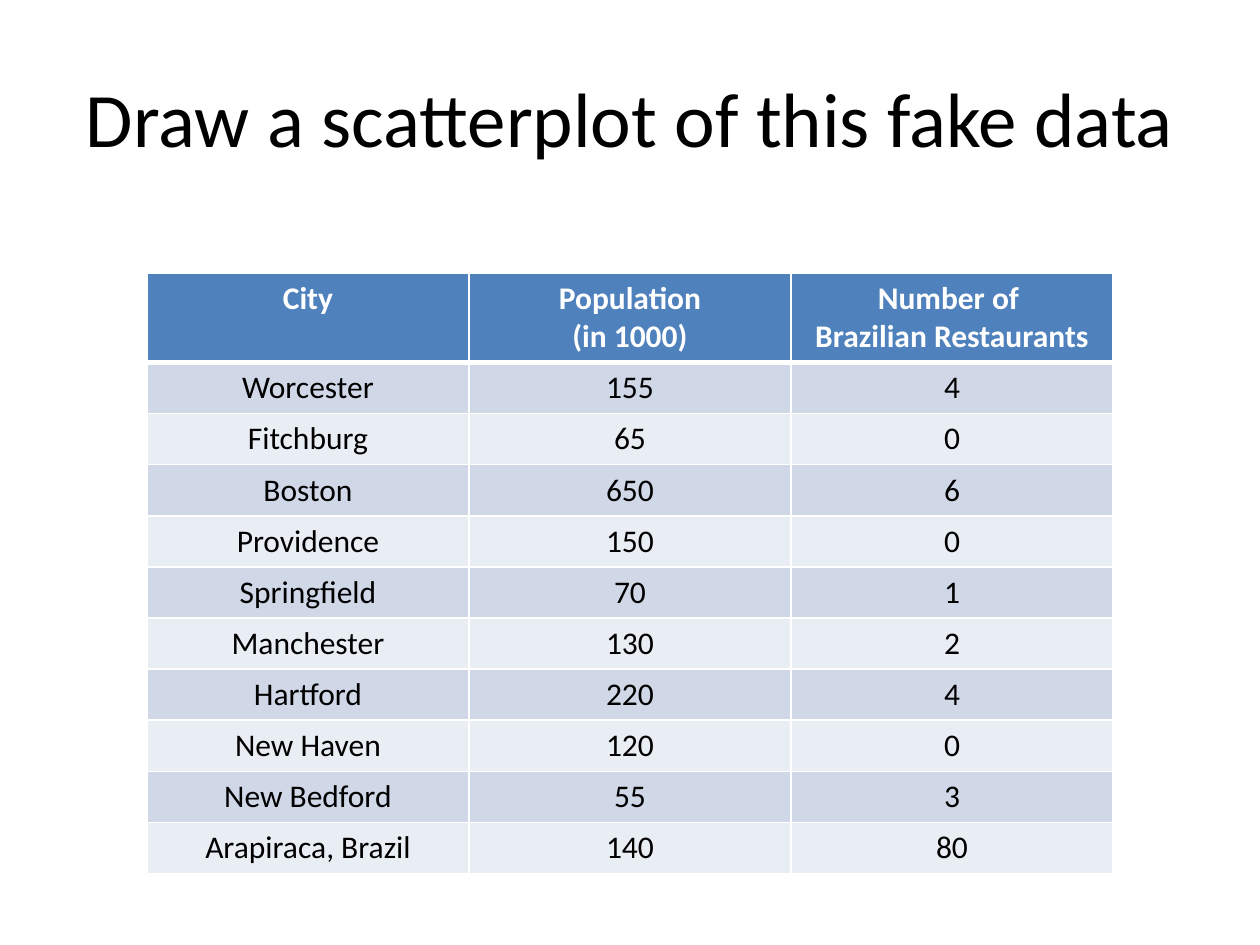
from dataclasses import dataclass
from typing import Any, NamedTuple

from pptx import Presentation, util as u
from pptx.dml.color import RGBColor
from pptx.enum import text
from pptx.oxml import parse_xml
from pptx.oxml.ns import nsdecls

PX = u.Inches(1) / 126


@dataclass(frozen=True)
class Theme:
    font: str = "Calibri"
    title_pt: int = 44
    cell_pt: int = 18
    ink: str = "000000"
    paper: str = "FFFFFF"
    header: str = "4F81BD"
    bands: tuple[str, str] = ("D0D8E8", "E9EDF4")
    rule_pt: int = 1
    header_rule_pt: int = 3


class Box(NamedTuple):
    left: int
    top: int
    width: int
    height: int


class City(NamedTuple):
    name: str
    population: int
    restaurants: int


THEME = Theme()
SLIDE = Box(0, 0, 1260, 945)
TITLE = Box(0, 38, 1260, 157)
TABLE = Box(147, 273, 966, 598)
HEADER_H, ROW_H = 88, 51

HEADINGS = ("City", "Population\v(in 1000)", "Number of \vBrazilian Restaurants")
CITIES = (
    City("Worcester", 155, 4),
    City("Fitchburg", 65, 0),
    City("Boston", 650, 6),
    City("Providence", 150, 0),
    City("Springfield", 70, 1),
    City("Manchester", 130, 2),
    City("Hartford", 220, 4),
    City("New Haven", 120, 0),
    City("New Bedford", 55, 3),
    City("Arapiraca, Brazil", 140, 80),
)


def emu(px: float) -> u.Emu:
    return u.Emu(round(px * PX))


def set_attrs(obj: Any, values: dict[str, Any]) -> None:
    for name, value in values.items():
        setattr(obj, name, value)


def write(tf: Any, words: str, size: int, color: str, bold: bool = False) -> None:
    p = tf.paragraphs[0]
    p.text = words
    p.alignment = text.PP_ALIGN.CENTER
    for r in p.runs:
        set_attrs(r.font, {"name": THEME.font, "size": u.Pt(size), "bold": bold})
        r.font.color.rgb = RGBColor.from_string(color)


def set_borders(cell: Any, top: int, bottom: int) -> None:
    tc_pr = cell._tc.get_or_add_tcPr()
    sides = {"L": THEME.rule_pt, "R": THEME.rule_pt, "T": top, "B": bottom}
    for i, (side, width) in enumerate(sides.items()):
        tc_pr.insert(i, parse_xml(
            f'<a:ln{side} {nsdecls("a")} w="{u.Pt(width)}"><a:solidFill>'
            f'<a:srgbClr val="{THEME.paper}"/></a:solidFill></a:ln{side}>'))


def draw_title(s: Any, words: str, box: Box) -> None:
    sp = s.shapes.title
    set_attrs(sp, {name: emu(px) for name, px in box._asdict().items()})
    tf = sp.text_frame
    set_attrs(tf, {"word_wrap": True, "vertical_anchor": text.MSO_ANCHOR.MIDDLE})
    write(tf, words, THEME.title_pt, THEME.ink)


def draw_table(s: Any, box: Box) -> None:
    rows = (HEADINGS, *CITIES)
    table = s.shapes.add_table(len(rows), len(HEADINGS), *map(emu, box)).table
    for column in table.columns:
        column.width = emu(box.width / len(HEADINGS))
    for i, values in enumerate(rows):
        is_header = i == 0
        table.rows[i].height = emu(HEADER_H if is_header else ROW_H)
        fill = THEME.header if is_header else THEME.bands[(i - 1) % 2]
        color = THEME.paper if is_header else THEME.ink
        top = THEME.header_rule_pt if i == 1 else THEME.rule_pt
        bottom = THEME.header_rule_pt if is_header else THEME.rule_pt
        for cell, value in zip(table.rows[i].cells, values):
            cell.fill.solid()
            cell.fill.fore_color.rgb = RGBColor.from_string(fill)
            set_borders(cell, top, bottom)
            write(cell.text_frame, str(value), THEME.cell_pt, color, is_header)


def main() -> None:
    prs = Presentation()
    set_attrs(prs, {"slide_width": emu(SLIDE.width), "slide_height": emu(SLIDE.height)})
    s = prs.slides.add_slide(prs.slide_layouts.get_by_name("Title Only"))
    draw_title(s, "Draw a scatterplot of this fake data", TITLE)
    draw_table(s, TABLE)
    prs.save("out.pptx")


if __name__ == "__main__":
    main()
